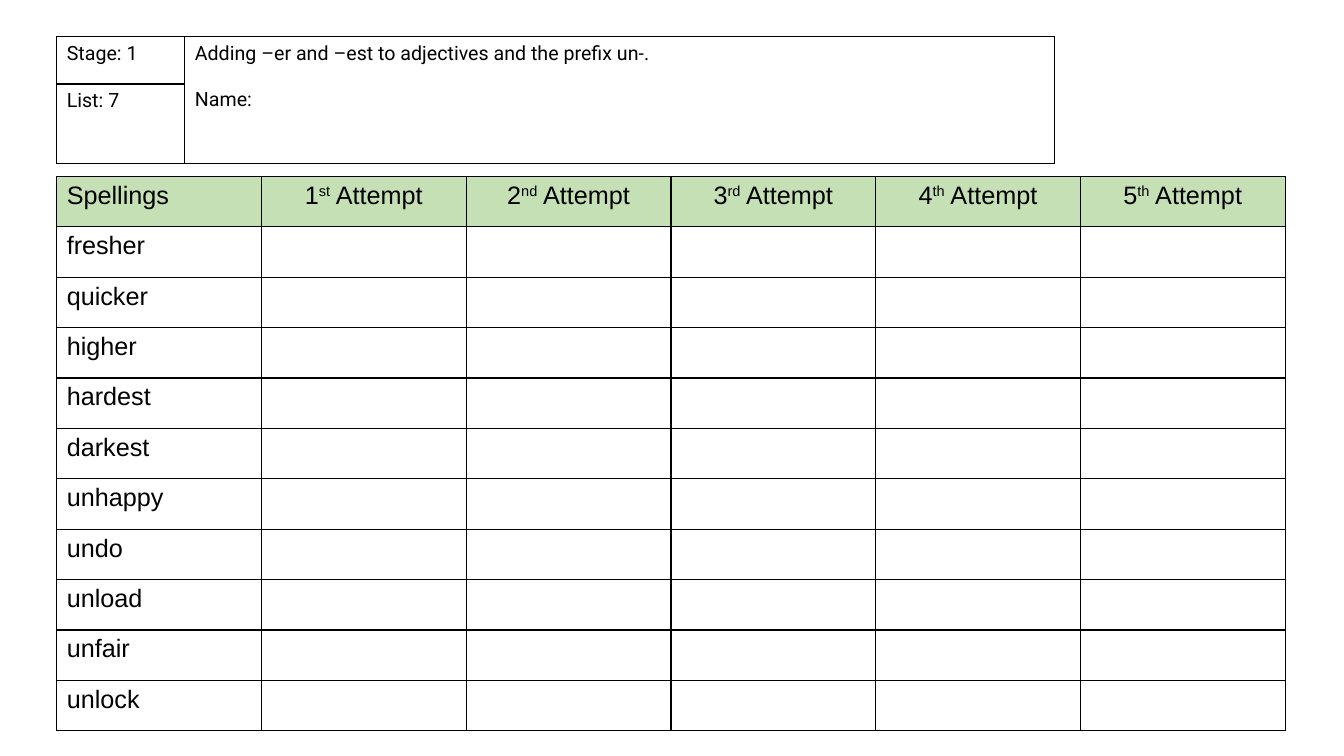
from dataclasses import dataclass

from lxml.etree import SubElement
from pptx import Presentation
from pptx.dml.color import RGBColor
from pptx.enum.text import PP_ALIGN as Align
from pptx.oxml.ns import qn
from pptx.slide import Slide
from pptx.table import Table, _Cell as Cell
from pptx.util import Emu, Pt

BLACK = RGBColor(0x00, 0x00, 0x00)
HEADER_GREEN = RGBColor(0xC5, 0xE0, 0xB4)

ORDINAL_ENDINGS = ["st", "nd", "rd", "th", "th"]
SPELLINGS = ["fresher", "quicker", "higher", "hardest", "darkest",
             "unhappy", "undo", "unload", "unfair", "unlock"]


@dataclass(frozen=True)
class Grid:
    """A ruled table; lengths in px."""
    left: int
    top: int
    column_widths: list[int]
    row_height: int
    row_count: int


DETAILS = Grid(54, 35, [122, 828], 45, 2)
ATTEMPTS = Grid(54, 168, [195] * 6, 48, len(SPELLINGS) + 1)


def px(length: int) -> Emu:
    return Emu(length * 9525)


def rule_cell(cell: Cell) -> None:
    """Draw a black 1 pt border on all four sides."""
    properties = cell._tc.get_or_add_tcPr()
    for side in ("lnL", "lnR", "lnT", "lnB"):
        line = SubElement(properties, qn(f"a:{side}"), w=str(Pt(1)))
        fill = SubElement(line, qn("a:solidFill"))
        SubElement(fill, qn("a:srgbClr"), val=str(BLACK))


def add_grid(slide: Slide, grid: Grid) -> Table:
    table = slide.shapes.add_table(
        grid.row_count, len(grid.column_widths), px(grid.left), px(grid.top),
        px(sum(grid.column_widths)), px(grid.row_height * grid.row_count)).table
    table.first_row = table.horz_banding = False
    for column, width in zip(table.columns, grid.column_widths):
        column.width = px(width)
    for row in table.rows:
        row.height = px(grid.row_height)
        for cell in row.cells:
            rule_cell(cell)
            cell.fill.background()
    return table


def write(cell: Cell, *lines: str, font: str = "Arial", size: int = 18,
          align: Align = Align.LEFT, gap: float = 0) -> None:
    """Write one paragraph per line; text between ^ marks is superscript."""
    frame = cell.text_frame
    for index, line in enumerate(lines):
        paragraph = frame.add_paragraph() if index else frame.paragraphs[0]
        paragraph.alignment = align
        if index:
            paragraph.space_before = Pt(gap)
        for part, text in enumerate(line.split("^")):
            run = paragraph.add_run()
            run.text = text
            run.font.name = font
            run.font.size = Pt(size)
            run.font.color.rgb = BLACK
            if part % 2:
                run._r.get_or_add_rPr().set("baseline", "30000")


def add_details(slide: Slide) -> None:
    table = add_grid(slide, DETAILS)
    table.cell(0, 1).merge(table.cell(1, 1))
    label = {"font": "Roboto", "size": 14}
    write(table.cell(0, 0), "Stage: 1", **label)
    write(table.cell(1, 0), "List: 7", **label)
    write(table.cell(0, 1), "Adding –er and –est to adjectives and the prefix un-.",
          "Name:", gap=16.4, **label)


def add_attempts(slide: Slide) -> None:
    table = add_grid(slide, ATTEMPTS)
    # Header row
    for cell in table.rows[0].cells:
        cell.fill.solid()
        cell.fill.fore_color.rgb = HEADER_GREEN
    write(table.cell(0, 0), "Spellings")
    for number, ending in enumerate(ORDINAL_ENDINGS, start=1):
        write(table.cell(0, number), f"{number}^{ending}^ Attempt", align=Align.CENTER)
    # Word column
    for row, word in enumerate(SPELLINGS, start=1):
        write(table.cell(row, 0), word)


def main() -> None:
    presentation = Presentation()
    presentation.slide_width, presentation.slide_height = px(1280), px(720)
    slide = presentation.slides.add_slide(presentation.slide_layouts[6])
    add_attempts(slide)
    add_details(slide)
    presentation.save("out.pptx")


if __name__ == "__main__":
    main()
